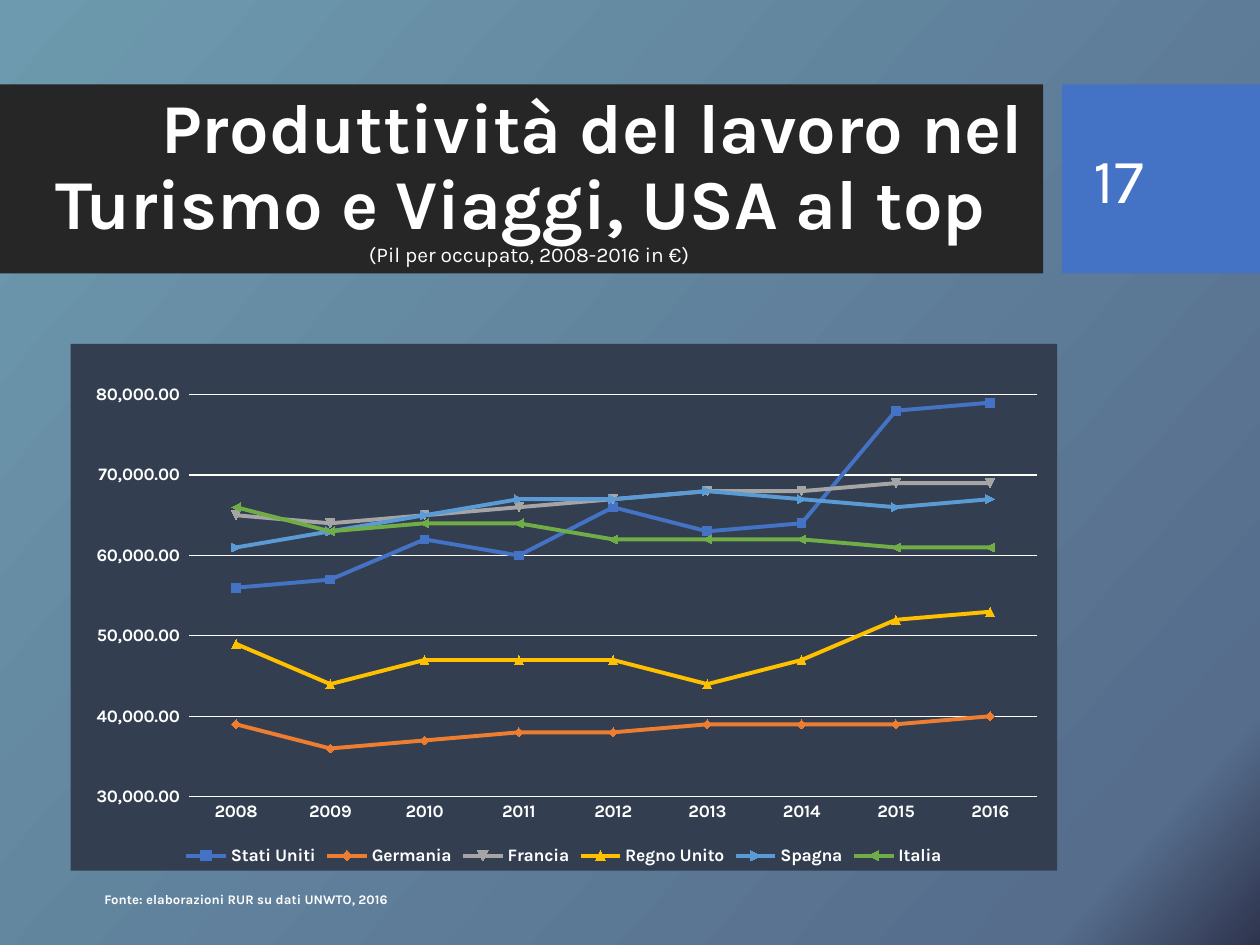
import pptx
import pptx.chart.data
import pptx.dml.color
import pptx.enum.chart
import pptx.enum.shapes
import pptx.enum.text
import pptx.oxml.ns
import pptx.util
from lxml import etree

Inches, Pt, qn = pptx.util.Inches, pptx.util.Pt, pptx.oxml.ns.qn
ALIGN, ANCHOR = pptx.enum.text.PP_ALIGN, pptx.enum.text.MSO_ANCHOR
TICK = pptx.enum.chart.XL_TICK_MARK

FONT, WHITE = "Karla", "FFFFFF"
HEADLINE = [
    ("\t", 18.8, True),
    ("Produttività del lavoro nel Turismo e Viaggi, USA al top ", 40, True),
    ("(Pil per occupato, 2008-2016 in €)", 12, False),
]
PAGE_NUMBER = "17"
SOURCE = "Fonte: elaborazioni RUR su dati UNWTO, 2016"
BACKDROP = [(0, "6D9AAE"), (90, "566D8C"), (100, "2E344E")]
BANDS = [(0, 8.28, "262626"), (8.43, 1.57, "4472C4")]
YEARS = [str(year) for year in range(2008, 2017)]
PRODUCTIVITY = [
    ("Stati Uniti", "4472C4", [56000, 57000, 62000, 60000, 66000, 63000, 64000, 78000, 79000]),
    ("Germania", "ED7D31", [39000, 36000, 37000, 38000, 38000, 39000, 39000, 39000, 40000]),
    ("Francia", "A5A5A5", [65000, 64000, 65000, 66000, 67000, 68000, 68000, 69000, 69000]),
    ("Regno Unito", "FFC000", [49000, 44000, 47000, 47000, 47000, 44000, 47000, 52000, 53000]),
    ("Spagna", "5B9BD5", [61000, 63000, 65000, 67000, 67000, 68000, 67000, 66000, 67000]),
    ("Italia", "70AD47", [66000, 63000, 64000, 64000, 62000, 62000, 62000, 61000, 61000]),
]
EURO_FORMAT = "#,##0.00_)"
PLOT_AREA = {"x": 0.12, "y": 0.02, "w": 0.86, "h": 0.84}


def rgb(value):
    return pptx.dml.color.RGBColor.from_string(value)


def paint(fill, color):
    fill.solid()
    fill.fore_color.rgb = rgb(color)


def stroke(line, color, width):
    paint(line.fill, color)
    line.width = Pt(width)


def style(font, size, bold=False):
    font.name, font.size, font.bold = FONT, Pt(size), bold
    font.color.rgb = rgb(WHITE)


def add_backdrop(slide):
    fill = slide.background.fill
    fill.gradient()
    fill.gradient_angle = 360 - 42
    stops = slide._element.find(".//" + qn("a:gsLst"))
    for stop in list(stops):
        stops.remove(stop)
    for position, color in BACKDROP:
        stop = etree.SubElement(stops, qn("a:gs"), pos=str(position * 1000))
        etree.SubElement(stop, qn("a:srgbClr"), val=color)


def add_bands(slide):
    for left, width, color in BANDS:
        band = slide.shapes.add_shape(
            pptx.enum.shapes.MSO_SHAPE.RECTANGLE,
            Inches(left), Inches(0.67), Inches(width), Inches(1.5))
        band.shadow.inherit = False
        paint(band.fill, color)
        band.line.fill.background()


def add_headline(slide):
    title = slide.shapes.title
    slide.shapes._spTree.append(title._element)
    title.left, title.top = Inches(0), Inches(0.7)
    title.width, title.height = Inches(8.4), Inches(1.46)
    frame = title.text_frame
    frame.auto_size = pptx.enum.text.MSO_AUTO_SIZE.NONE
    frame.vertical_anchor = ANCHOR.MIDDLE
    headline = frame.paragraphs[0]
    headline.alignment, headline.line_spacing = ALIGN.CENTER, 0.9
    tabs = etree.SubElement(headline._p.get_or_add_pPr(), qn("a:tabLst"))
    etree.SubElement(tabs, qn("a:tab"), pos=str(Inches(1)), algn="l")
    for text, size, bold in HEADLINE:
        if not bold:
            headline.add_line_break()
        run = headline.add_run()
        run.text = text
        style(run.font, size, bold)


def add_label(slide, text, box, size, bold=False):
    frame = slide.shapes.add_textbox(*map(Inches, box)).text_frame
    label = frame.paragraphs[0]
    label.text = text
    style(label.font, size, bold)
    return frame


def add_productivity_chart(slide):
    data = pptx.chart.data.CategoryChartData(number_format=EURO_FORMAT)
    data.categories = YEARS
    for country, _, values in PRODUCTIVITY:
        data.add_series(country, values)
    chart = slide.shapes.add_chart(
        pptx.enum.chart.XL_CHART_TYPE.LINE_MARKERS,
        Inches(0.56), Inches(2.73), Inches(7.83), Inches(4.18), data).chart
    style(chart.font, 10)
    chart.has_title = False
    chart.has_legend = True
    chart.legend.position = pptx.enum.chart.XL_LEGEND_POSITION.BOTTOM
    chart.legend.include_in_layout = False
    style(chart.legend.font, 10, True)

    years, euros = chart.category_axis, chart.value_axis
    for axis in (years, euros):
        axis.major_tick_mark = axis.minor_tick_mark = TICK.NONE
        style(axis.tick_labels.font, 10, True)
    stroke(years.format.line, WHITE, 0.75)
    euros.minimum_scale, euros.maximum_scale, euros.major_unit = 30000, 85000, 10000
    euros.tick_labels.number_format = EURO_FORMAT
    euros.tick_labels.number_format_is_linked = False
    euros.format.line.fill.background()
    stroke(euros.major_gridlines.format.line, WHITE, 0.75)

    chart.plots[0].vary_by_categories = False
    for series, (_, color, _) in zip(chart.plots[0].series, PRODUCTIVITY):
        series.smooth = False
        stroke(series.format.line, color, 2.25)
        series.marker.size = 5
        paint(series.marker.format.fill, color)
        stroke(series.marker.format.line, color, 0.75)

    plot_area = chart._chartSpace.find(".//" + qn("c:plotArea"))
    layout = plot_area.find(qn("c:layout"))
    if layout is None:
        layout = etree.Element(qn("c:layout"))
        plot_area.insert(0, layout)
    manual = etree.SubElement(layout, qn("c:manualLayout"))
    settings = {"layoutTarget": "inner", "xMode": "edge", "yMode": "edge", **PLOT_AREA}
    for key, value in settings.items():
        etree.SubElement(manual, qn("c:" + key), val=str(value))

    panel = etree.Element(qn("c:spPr"))
    panel_fill = etree.SubElement(panel, qn("a:solidFill"))
    etree.SubElement(panel_fill, qn("a:srgbClr"), val="333F50")
    etree.SubElement(etree.SubElement(panel, qn("a:ln")), qn("a:noFill"))
    chart._chartSpace.find(qn("c:chart")).addnext(panel)


def main():
    deck = pptx.Presentation()
    deck.slide_width, deck.slide_height = Inches(10), Inches(7.5)
    slide = deck.slides.add_slide(deck.slide_layouts[5])
    add_backdrop(slide)
    add_bands(slide)
    add_headline(slide)
    number = add_label(slide, PAGE_NUMBER, (8.58, 0.82, 1.27, 1.19), 36)
    number.word_wrap = True
    number.vertical_anchor = ANCHOR.MIDDLE
    add_productivity_chart(slide)
    source = add_label(slide, SOURCE, (0.73, 7.02, 2.48, 0.24), 7.5, True)
    source.word_wrap = False
    source.auto_size = pptx.enum.text.MSO_AUTO_SIZE.SHAPE_TO_FIT_TEXT
    source.paragraphs[0].alignment = ALIGN.JUSTIFY
    source.paragraphs[0].line_spacing = 1.07
    source.paragraphs[0].space_after = Pt(6)
    deck.save("out.pptx")


if __name__ == "__main__":
    main()
